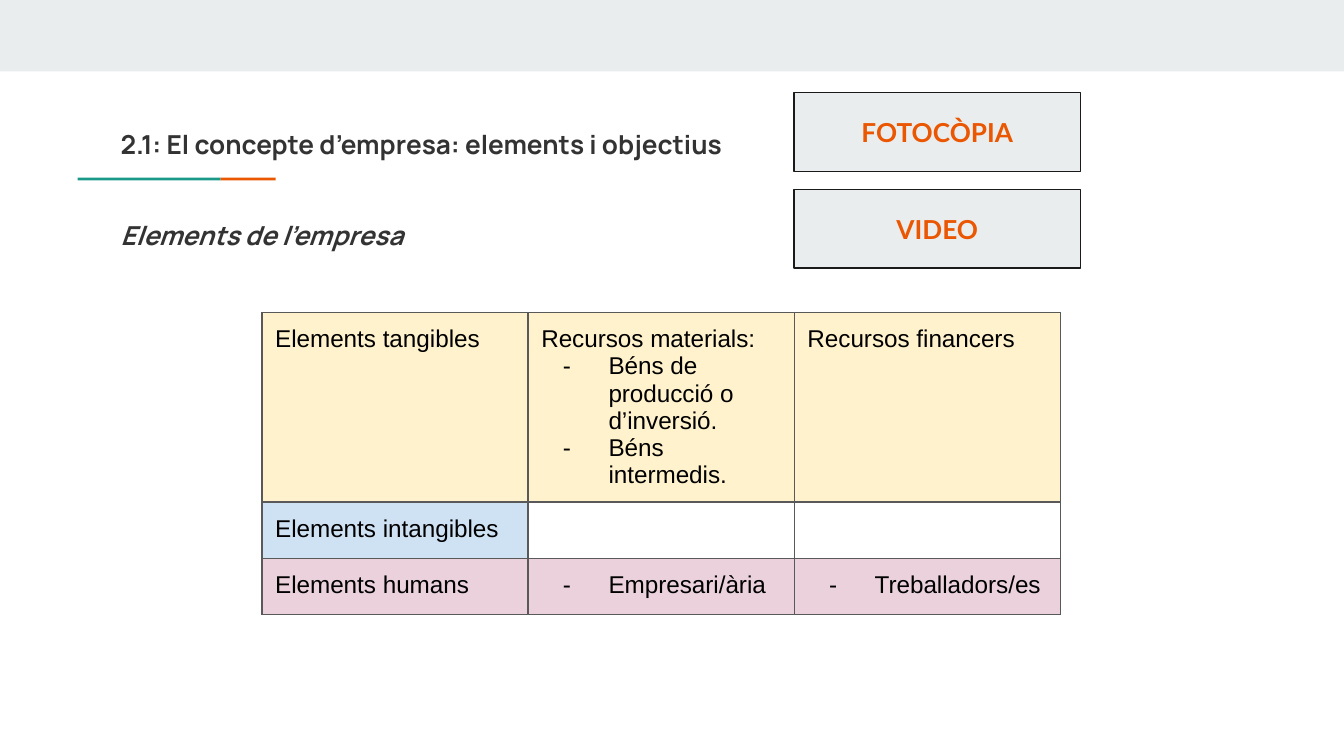
from lxml import etree
from pptx import Presentation
from pptx.dml.color import RGBColor
from pptx.enum.shapes import MSO_SHAPE
from pptx.enum.text import MSO_ANCHOR, MSO_AUTO_SIZE, PP_ALIGN
from pptx.oxml.ns import qn
from pptx.util import Cm, Pt

RECT = MSO_SHAPE.RECTANGLE
TOP, MIDDLE = MSO_ANCHOR.TOP, MSO_ANCHOR.MIDDLE
LEFT, CENTER = PP_ALIGN.LEFT, PP_ALIGN.CENTER

BLACK = RGBColor(0x00, 0x00, 0x00)
INK = RGBColor(0x33, 0x33, 0x33)
OUTLINE = RGBColor(0x1A, 0x1A, 0x1A)
BORDER = RGBColor(0x59, 0x59, 0x59)
MIST = RGBColor(0xE9, 0xED, 0xEE)
ORANGE = RGBColor(0xEB, 0x56, 0x00)
TEAL = RGBColor(0x1A, 0x99, 0x88)
CREAM = RGBColor(0xFF, 0xF2, 0xCC)
BLUE = RGBColor(0xCF, 0xE2, 0xF3)
PINK = RGBColor(0xEA, 0xD1, 0xDC)

# Content
TITLE = "2.1: El concepte d’empresa: elements i objectius"
SUBTITLE = "Elements de l’empresa"
BUTTONS = ["FOTOCÒPIA", "VIDEO"]
# Each row: height in cm, colour, cells; lines starting with "- " are list items
ROWS = [
    (3.58, CREAM, [["Elements tangibles"],
                   ["Recursos materials:", "- Béns de producció o d’inversió.",
                    "- Béns intermedis."],
                   ["Recursos financers"]]),
    (1.06, BLUE, [["Elements intangibles"], [], []]),
    (1.06, PINK, [["Elements humans"], ["- Empresari/ària"],
                  ["- Treballadors/es"]]),
]
ACCENTS = [(1.47, 2.7, TEAL), (4.17, 1.04, ORANGE)]  # left, width, colour

INSET = Cm(0.25)
COL_W = 5.03
CELL_SIZE = 13


def write(p, text, font="Manrope", size=14, color=INK, bold=None, italic=None,
          align=LEFT, spacing=None, bullet=None):
    """Fill one paragraph with formatted text and an optional bullet."""
    p.alignment = align
    p.line_spacing = spacing
    p.space_before = p.space_after = Pt(0)
    r = p.add_run()
    r.text = text
    r.font.name, r.font.size = font, Pt(size)
    r.font.bold, r.font.italic = bold, italic
    r.font.color.rgb = color
    pPr = p._p.get_or_add_pPr()
    pPr.set("marL", str(Cm(1.27) if bullet else 0))
    pPr.set("indent", str(Cm(-0.86) if bullet else 0))
    if bullet:
        clr = etree.SubElement(pPr, qn("a:buClr"))
        etree.SubElement(clr, qn("a:srgbClr"), val=str(color))
        etree.SubElement(pPr, qn("a:buFont"), typeface=font)
        etree.SubElement(pPr, qn("a:buChar"), char=bullet)
    else:
        etree.SubElement(pPr, qn("a:buNone"))


def set_frame(tf, anchor):
    tf.word_wrap = True
    tf.auto_size = MSO_AUTO_SIZE.NONE
    tf.vertical_anchor = anchor
    tf.margin_left = tf.margin_right = tf.margin_top = tf.margin_bottom = INSET


def add_rect(left, top, width, height, fill, line=None):
    sp = slide.shapes.add_shape(RECT, Cm(left), Cm(top), Cm(width), Cm(height))
    sp.shadow.inherit = False
    sp.fill.solid()
    sp.fill.fore_color.rgb = fill
    if line is None:
        sp.line.fill.background()
    else:
        sp.line.color.rgb = line
        sp.line.width = Pt(0.75)
    return sp


def set_borders(cell):
    tcPr = cell._tc.get_or_add_tcPr()
    for side in ("a:lnL", "a:lnR", "a:lnT", "a:lnB"):
        ln = etree.SubElement(tcPr, qn(side), w=str(Pt(0.75)))
        fill = etree.SubElement(ln, qn("a:solidFill"))
        etree.SubElement(fill, qn("a:srgbClr"), val=str(BORDER))


def fill_cell(cell, lines, color):
    set_borders(cell)
    cell.margin_left = cell.margin_right = INSET
    cell.margin_top = cell.margin_bottom = INSET
    tf = cell.text_frame
    if not lines:
        cell.fill.background()
        etree.SubElement(tf.paragraphs[0]._p, qn("a:endParaRPr"),
                         sz=str(CELL_SIZE * 100))
        return
    cell.fill.solid()
    cell.fill.fore_color.rgb = color
    for i, line in enumerate(lines):
        p = tf.add_paragraph() if i else tf.paragraphs[0]
        write(p, line.removeprefix("- "), font="Arial", size=CELL_SIZE,
              color=BLACK, bold=False,
              bullet="-" if line.startswith("- ") else None)


prs = Presentation()
prs.slide_width, prs.slide_height = Cm(25.4), Cm(14.29)
slide = prs.slides.add_slide(prs.slide_layouts[1])

# Top band and accent line
add_rect(0, 0, 25.4, 1.35, MIST)
for left, width, color in ACCENTS:
    add_rect(left, 3.36, width, 0.05, color)

# Title and subtitle
for sp, text, top, height, italic in [
        (slide.shapes.title, TITLE, 2.08, 1.5, False),
        (slide.placeholders[1], SUBTITLE, 3.81, 6.27, True)]:
    sp.left, sp.top, sp.width, sp.height = Cm(2.03), Cm(top), Cm(21.36), Cm(height)
    set_frame(sp.text_frame, TOP)
    write(sp.text_frame.paragraphs[0], text, bold=True, italic=italic,
          spacing=1.15)

# Table of elements
n_cols = len(ROWS[0][2])
total_h = sum(height for height, _, _ in ROWS)
table = slide.shapes.add_table(len(ROWS), n_cols, Cm(4.95), Cm(5.91),
                               Cm(COL_W * n_cols), Cm(total_h)).table
table.first_row = table.horz_banding = False
for col in table.columns:
    col.width = Cm(COL_W)
for r, (height, color, cells) in enumerate(ROWS):
    table.rows[r].height = Cm(height)
    for c, lines in enumerate(cells):
        fill_cell(table.cell(r, c), lines, color)

# Buttons
for i, label in enumerate(BUTTONS):
    sp = add_rect(15.01, 1.75 + 1.83 * i, 5.41, 1.49, MIST, line=OUTLINE)
    set_frame(sp.text_frame, MIDDLE)
    write(sp.text_frame.paragraphs[0], label, font="Lato", color=ORANGE,
          bold=True, align=CENTER)

prs.save("out.pptx")
